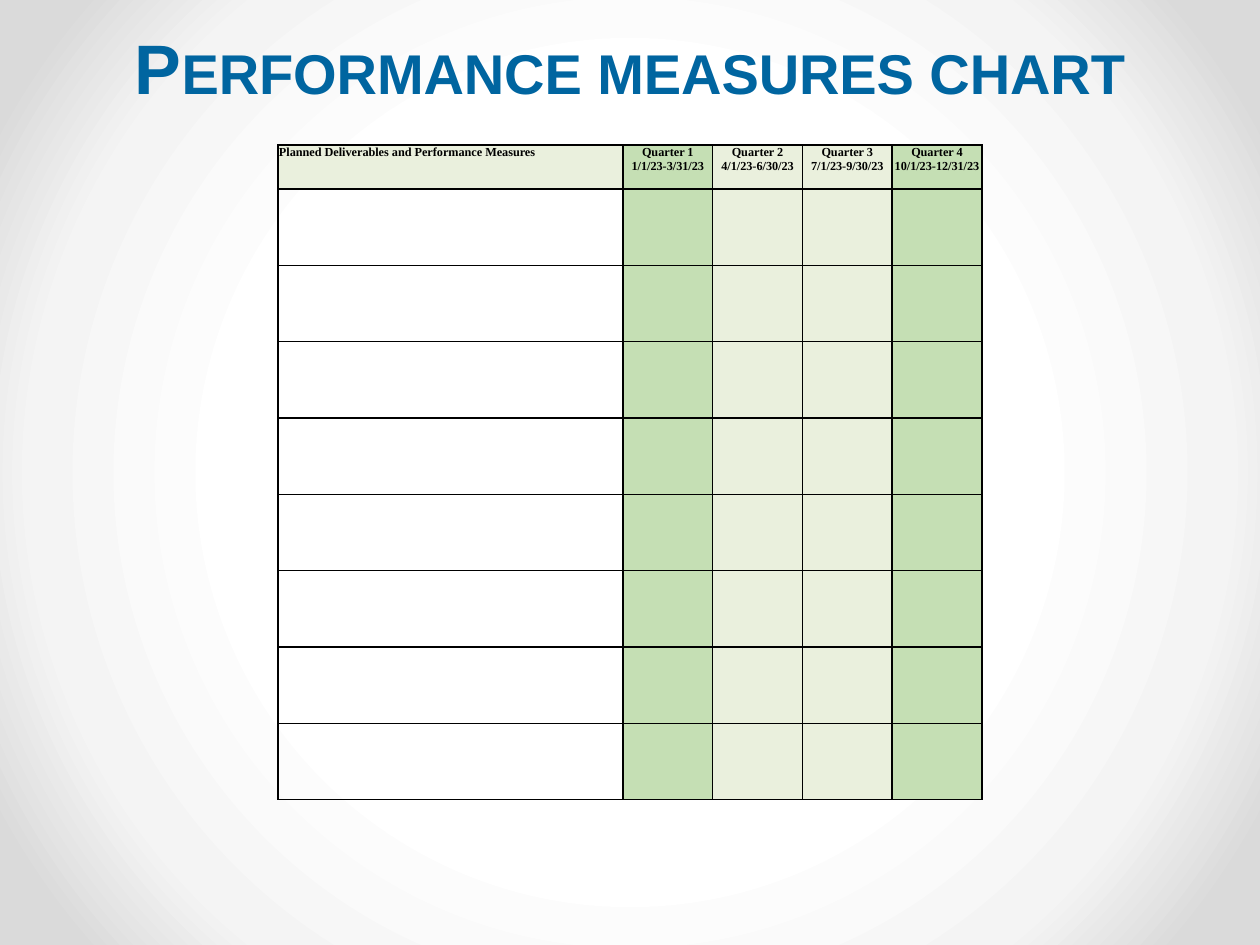
from dataclasses import dataclass

from pptx import Presentation
from pptx.dml.color import RGBColor
from pptx.enum.text import MSO_ANCHOR, PP_ALIGN
from pptx.oxml import parse_xml
from pptx.oxml.ns import nsdecls
from pptx.util import Pt

CENTER, LEFT = PP_ALIGN.CENTER, PP_ALIGN.LEFT
BOTTOM = MSO_ANCHOR.BOTTOM
EMU_PER_PX = 914400 / 126


@dataclass(frozen=True)
class Theme:
    """Colours, fonts and type sizes of the slide."""
    title_font: str = "Arial"
    table_font: str = "Times New Roman"
    title_size: int = 40
    table_size: int = 7
    border_width: int = 1
    title_color: str = "0065A0"
    ink: str = "000000"
    pale_green: str = "EAF0DD"
    green: str = "C5DFB4"
    backdrop: tuple = ((50, "FFFFFF"), (76, "F4F4F4"), (92, "DADADA"))


THEME = Theme()
HEADERS = [
    ("Planned Deliverables and Performance Measures",),
    ("Quarter 1", "1/1/23-3/31/23"),
    ("Quarter 2", "4/1/23-6/30/23"),
    ("Quarter 3", "7/1/23-9/30/23"),
    ("Quarter 4", "10/1/23-12/31/23"),
]
QUARTER_FILLS = [THEME.green, THEME.pale_green, THEME.pale_green, THEME.green]
BLANK_ROWS = 8


def px(length):
    """Turn a length in px into EMU."""
    return round(length * EMU_PER_PX)


def add_run(paragraph, text, font_name, size, color):
    """Add one bold run and return it."""
    run = paragraph.add_run()
    run.text = text
    run.font.name = font_name
    run.font.size = Pt(size)
    run.font.bold = True
    run.font.color.rgb = RGBColor.from_string(color)
    return run


def paint_background(slide):
    """Give the slide its radial grey gradient."""
    stops = "".join(
        f'<a:gs pos="{position * 1000}"><a:srgbClr val="{color}"/></a:gs>'
        for position, color in THEME.backdrop)
    slide._element.cSld.insert(0, parse_xml(
        f'<p:bg {nsdecls("p", "a")}><p:bgPr><a:gradFill rotWithShape="1">'
        f'<a:gsLst>{stops}</a:gsLst><a:path path="circle">'
        '<a:fillToRect l="50000" t="50000" r="50000" b="50000"/></a:path>'
        '</a:gradFill><a:effectLst/></p:bgPr></p:bg>'))


def add_title(slide, left, top, width, height):
    """Place the small-caps title at the bottom of its box."""
    shape = slide.shapes.add_textbox(px(left), px(top), px(width), px(height))
    frame = shape.text_frame
    frame.word_wrap = True
    frame.vertical_anchor = BOTTOM
    paragraph = frame.paragraphs[0]
    paragraph.alignment = CENTER
    run = add_run(paragraph, "Performance measures chart", THEME.title_font,
                  THEME.title_size, THEME.title_color)
    run.font._element.set("cap", "small")


def style_cell(cell, fill_color):
    """Set the margins, borders and fill of a cell."""
    cell.margin_left = cell.margin_right = px(1)
    cell.margin_top = cell.margin_bottom = px(1)
    properties = cell._tc.get_or_add_tcPr()
    for side in ("lnL", "lnR", "lnT", "lnB"):
        properties.append(parse_xml(
            f'<a:{side} {nsdecls("a")} w="{Pt(THEME.border_width)}"><a:solidFill>'
            f'<a:srgbClr val="{THEME.ink}"/></a:solidFill></a:{side}>'))
    if fill_color:
        cell.fill.solid()
        cell.fill.fore_color.rgb = RGBColor.from_string(fill_color)
    else:
        cell.fill.background()


def write_header(cell, lines, alignment):
    """Write the lines of a header cell, one paragraph each."""
    frame = cell.text_frame
    for index, line in enumerate(lines):
        paragraph = frame.add_paragraph() if index else frame.paragraphs[0]
        paragraph.alignment = alignment
        add_run(paragraph, line, THEME.table_font, THEME.table_size, THEME.ink)


def add_measures_table(slide, left, top, width, height):
    """Place the quarterly table: one header row above equal blank rows."""
    measure_width, header_height = 345, 44
    quarter_width = (width - measure_width) / len(QUARTER_FILLS)
    row_height = (height - header_height) / BLANK_ROWS
    table = slide.shapes.add_table(
        BLANK_ROWS + 1, len(HEADERS),
        px(left), px(top), px(width), px(height)).table
    table.first_row = table.horz_banding = False
    for index, column in enumerate(table.columns):
        column.width = px(quarter_width if index else measure_width)
    for row_index, row in enumerate(table.rows):
        row.height = px(row_height if row_index else header_height)
        measure_fill = None if row_index else THEME.pale_green
        for cell, fill_color in zip(row.cells, [measure_fill, *QUARTER_FILLS]):
            style_cell(cell, fill_color)
    for index, lines in enumerate(HEADERS):
        write_header(table.cell(0, index), lines, CENTER if index else LEFT)


def main():
    """Build the slide and save it."""
    presentation = Presentation()
    presentation.slide_width, presentation.slide_height = px(1260), px(945)
    slide = presentation.slides.add_slide(presentation.slide_layouts[6])
    paint_background(slide)
    add_title(slide, 64, 10, 1132, 105)
    add_measures_table(slide, 278, 145, 704, 655)
    presentation.save("out.pptx")


if __name__ == "__main__":
    main()
